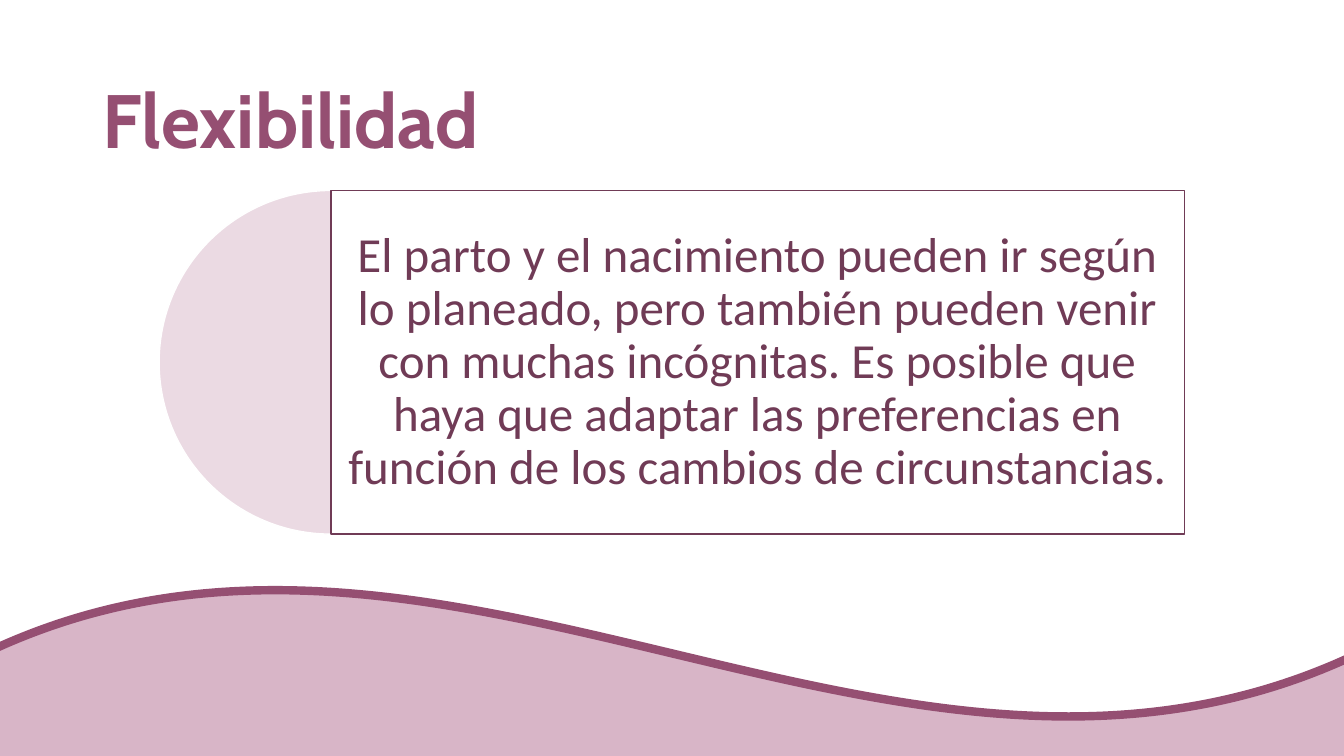
"""Build the slide on flexibility during labour and birth."""
from lxml.etree import SubElement
from pptx import Presentation
from pptx.dml.color import RGBColor
from pptx.enum.shapes import MSO_SHAPE as Shape
from pptx.enum.text import MSO_ANCHOR as Anchor, PP_ALIGN as Align
from pptx.oxml.ns import qn
from pptx.util import Cm, Pt

TITLE = "Flexibilidad"
MESSAGE = (
    "El parto y el nacimiento pueden ir según lo planeado, pero también pueden "
    "venir con muchas incógnitas. Es posible que haya que adaptar las "
    "preferencias en función de los cambios de circunstancias."
)
COLORS = {
    "plum": "954F72",
    "dark plum": "703B56",
    "pink": "D8B5C7",
    "pale pink": "EBDAE3",
    "white": "FFFFFF",
}
SLIDE_SIZE = (33.87, 19.05)
WAVE_BOX = (-0.38, 14.81, 34.62, 13.23)
TITLE_BOX = (2.33, 1.02, 29.21, 3.68)
PANEL_LEFT, PANEL_TOP, PANEL_WIDTH, PANEL_HEIGHT = 8.34, 4.8, 21.51, 8.66
PANEL_INSET = 0.38
HALF_CIRCLE_ANGLES = (54, 162)


def color(name):
    return RGBColor.from_string(COLORS[name])


def add_shape(slide, kind, box, fill, line, line_width):
    shape = slide.shapes.add_shape(kind, *map(Cm, box))
    shape.shadow.inherit = False
    shape.fill.solid()
    shape.fill.fore_color.rgb = color(fill)
    shape.line.color.rgb = color(line)
    shape.line.width = Pt(line_width)
    return shape


def write_text(shape, text, font_name, size, font_color, bold, spacing, align):
    frame = shape.text_frame
    frame.word_wrap = True
    frame.vertical_anchor = Anchor.MIDDLE
    paragraph = frame.paragraphs[0]
    paragraph.text = text
    paragraph.alignment = align
    paragraph.line_spacing = spacing
    font = paragraph.font
    font.name, font.size, font.bold = font_name, Pt(size), bold
    font.color.rgb = color(font_color)
    return frame


def add_message(slide):
    half_circle_box = (PANEL_LEFT - PANEL_HEIGHT / 2, PANEL_TOP, PANEL_HEIGHT, PANEL_HEIGHT)
    half_circle = add_shape(slide, Shape.PIE, half_circle_box, "pale pink", "white", 1)
    for index, angle in enumerate(HALF_CIRCLE_ANGLES):
        half_circle.adjustments[index] = angle

    panel_box = (PANEL_LEFT, PANEL_TOP, PANEL_WIDTH, PANEL_HEIGHT)
    panel = add_shape(slide, Shape.RECTANGLE, panel_box, "white", "dark plum", 1)
    fill_color = panel.fill._xPr.find(qn("a:solidFill"))[0]
    SubElement(fill_color, qn("a:alpha"), val="90000")
    frame = write_text(panel, MESSAGE, "Calibri", 35, "dark plum", False, 0.9, Align.CENTER)
    frame.margin_left = frame.margin_right = Cm(PANEL_INSET)
    frame.margin_top = frame.margin_bottom = Cm(PANEL_INSET)


def main():
    presentation = Presentation()
    presentation.slide_width, presentation.slide_height = map(Cm, SLIDE_SIZE)
    slide = presentation.slides.add_slide(presentation.slide_layouts[6])
    add_shape(slide, Shape.WAVE, WAVE_BOX, "pink", "plum", 6)
    title = slide.shapes.add_textbox(*map(Cm, TITLE_BOX))
    title_frame = write_text(title, TITLE, "Cabin", 54, "plum", True, 1.1, Align.LEFT)
    title_frame.paragraphs[0].space_after = Pt(12)
    add_message(slide)
    presentation.save("out.pptx")


if __name__ == "__main__":
    main()
